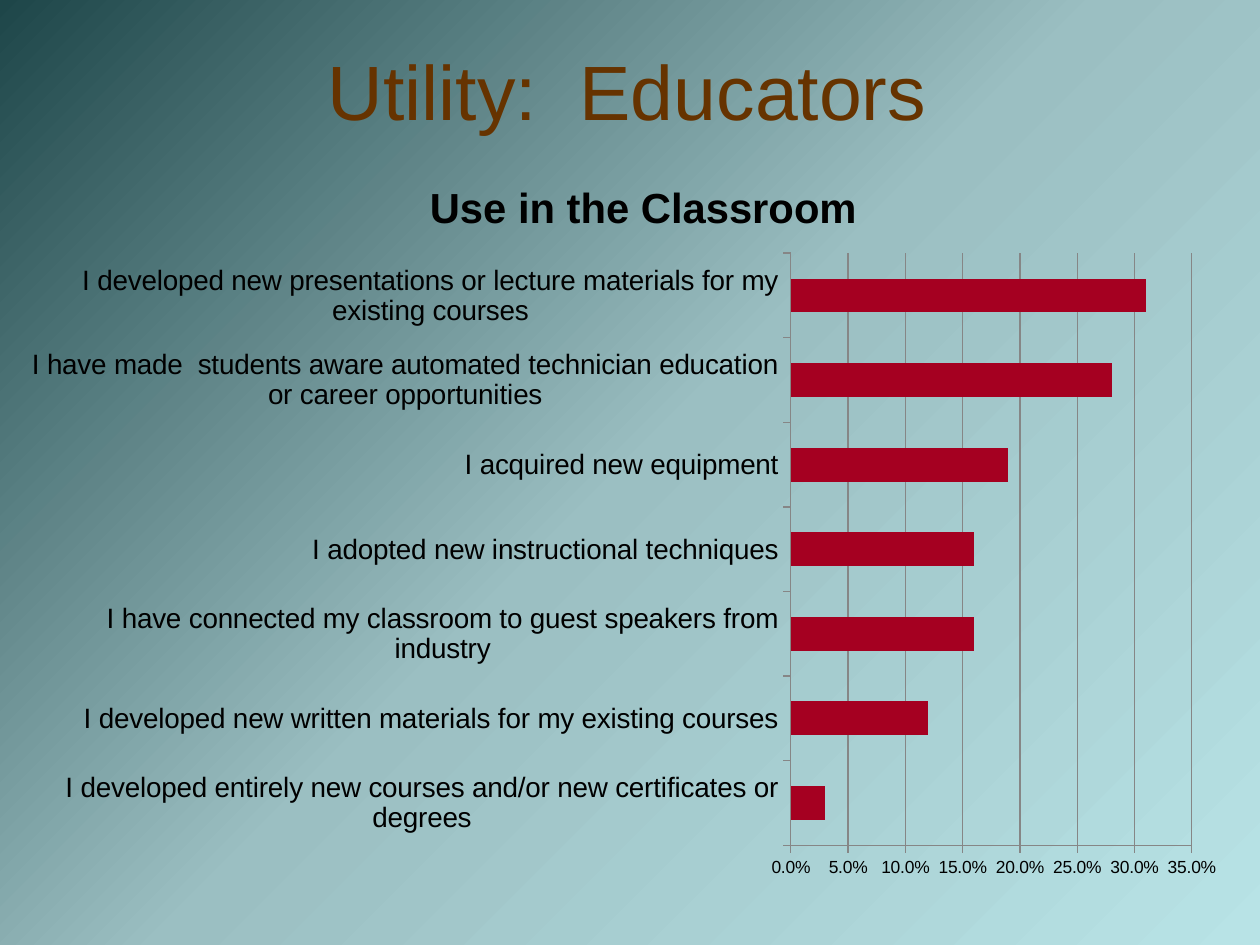
from copy import deepcopy
from dataclasses import dataclass

from pptx import Presentation
from pptx.chart.data import CategoryChartData as Data
from pptx.dml.color import RGBColor as RGB
from pptx.enum.chart import XL_CHART_TYPE as Kind, XL_TICK_MARK as Tick
from pptx.enum.text import MSO_ANCHOR as Anchor, PP_ALIGN as Align
from pptx.oxml import parse_xml
from pptx.oxml.ns import nsdecls, qn
from pptx.util import Cm, Pt


@dataclass(frozen=True)
class Theme:
    font: str = "Arial"
    title: RGB = RGB(0x66, 0x33, 0x00)
    text: RGB = RGB(0, 0, 0)
    bar: RGB = RGB(0xA5, 0x00, 0x21)
    grid: RGB = RGB(0x86, 0x86, 0x86)
    back: tuple = ((0, "1E4649"), (0.5, "9BBFC2"), (1, "B8E3E6"))
    head: int = 44
    sub: int = 24
    label: int = 16
    tick: int = 10


@dataclass(frozen=True)
class Use:
    label: str
    share: float


@dataclass(frozen=True)
class Box:
    x: float
    y: float
    w: float
    h: float

    def cm(self) -> tuple:
        return Cm(self.x), Cm(self.y), Cm(self.w), Cm(self.h)


THEME = Theme()
HEAD = Box(1.9, 0.22, 21.6, 3.18)
CHART = Box(0.64, 3.18, 24.33, 14.81)
# Percent of the chart area
PLOT = {"x": 62.7, "y": 13, "w": 33.4, "h": 80.6}
SUB = {"x": 32, "y": 2}

# Answers, from the bottom bar up
USES = [
    Use("I developed entirely new courses and/or new certificates or degrees", 0.03),
    Use("I developed new written materials for my existing courses", 0.12),
    Use("I have connected my classroom to guest speakers from industry", 0.16),
    Use("I adopted new instructional techniques", 0.16),
    Use("I acquired new equipment", 0.19),
    Use("I have made  students aware automated technician education or career opportunities", 0.28),
    Use("I developed new presentations or lecture materials for my existing courses", 0.31),
]


def style(font, size: int, color: RGB, bold: bool = False) -> None:
    font.name, font.size, font.bold = THEME.font, Pt(size), bold
    font.color.rgb = color


def paint(slide) -> None:
    """Fill the background with the three-stop gradient."""
    fill = slide.background.fill
    fill.gradient()
    fill.gradient_angle = 315
    last = list(slide._element.iter(qn("a:gs")))[-1]
    last.addnext(deepcopy(last))
    for stop, (place, color) in zip(fill.gradient_stops, THEME.back):
        stop.position = place
        stop.color.rgb = RGB.from_string(color)


def add_head(slide, text: str, box: Box) -> None:
    frame = slide.shapes.add_textbox(*box.cm()).text_frame
    frame.word_wrap = True
    frame.vertical_anchor = Anchor.MIDDLE
    frame.margin_left = frame.margin_top = frame.margin_bottom = Cm(0.15)
    frame.margin_right = Cm(0.25)
    para = frame.paragraphs[0]
    para.text, para.alignment = text, Align.CENTER
    style(para.font, THEME.head, THEME.title)


def place(part, spot: int, sizes: dict, inner: bool = False) -> None:
    """Fix a chart part, its layout being child number spot."""
    for old in part.findall(qn("c:layout")):
        part.remove(old)
    target = '<c:layoutTarget val="inner"/>' if inner else ""
    vals = "".join(f'<c:{key} val="{val / 100:.3f}"/>'
                   for key, val in sizes.items())
    part.insert(spot, parse_xml(
        f'<c:layout {nsdecls("c")}><c:manualLayout>{target}'
        f'<c:xMode val="edge"/><c:yMode val="edge"/>{vals}'
        f'</c:manualLayout></c:layout>'))


def set_axis(axis, size: int, grid: bool) -> None:
    axis.major_tick_mark, axis.minor_tick_mark = Tick.OUTSIDE, Tick.NONE
    axis.has_major_gridlines = grid
    lines = [axis.format.line]
    if grid:
        lines.append(axis.major_gridlines.format.line)
    for line in lines:
        line.color.rgb, line.width = THEME.grid, Pt(0.75)
    style(axis.tick_labels.font, size, THEME.text)


def add_bars(slide, title: str, uses: list[Use], box: Box) -> None:
    data = Data(number_format="0.0%")
    data.categories = [use.label for use in uses]
    data.add_series("Series 1", [use.share for use in uses])
    chart = slide.shapes.add_chart(Kind.BAR_CLUSTERED, *box.cm(), data).chart
    style(chart.font, THEME.tick, THEME.text)
    chart.has_legend = False

    # Chart title
    chart.has_title = True
    para = chart.chart_title.text_frame.paragraphs[0]
    para.text = title
    style(para.font, THEME.sub, THEME.text, bold=True)
    chart.chart_title.include_in_layout = False

    # Axes
    set_axis(chart.category_axis, THEME.label, grid=False)
    axis = chart.value_axis
    set_axis(axis, THEME.tick, grid=True)
    axis.minimum_scale, axis.maximum_scale, axis.major_unit = 0, 0.35, 0.05
    axis.tick_labels.number_format = "0.0%"
    axis.tick_labels.number_format_is_linked = False

    # Bars
    plot = chart.plots[0]
    plot.gap_width, plot.vary_by_categories = 150, False
    fill = plot.series[0].format.fill
    fill.solid()
    fill.fore_color.rgb = THEME.bar

    # Places within the chart
    root = chart._chartSpace.chart
    place(root.plotArea, 0, PLOT, inner=True)
    place(root.find(qn("c:title")), 1, SUB)


def main() -> None:
    deck = Presentation()
    deck.slide_width, deck.slide_height = Cm(25.4), Cm(19.05)
    slide = deck.slides.add_slide(deck.slide_layouts[6])
    paint(slide)
    add_head(slide, "Utility:  Educators", HEAD)
    add_bars(slide, "Use in the Classroom", USES, CHART)
    deck.save("out.pptx")


if __name__ == "__main__":
    main()
